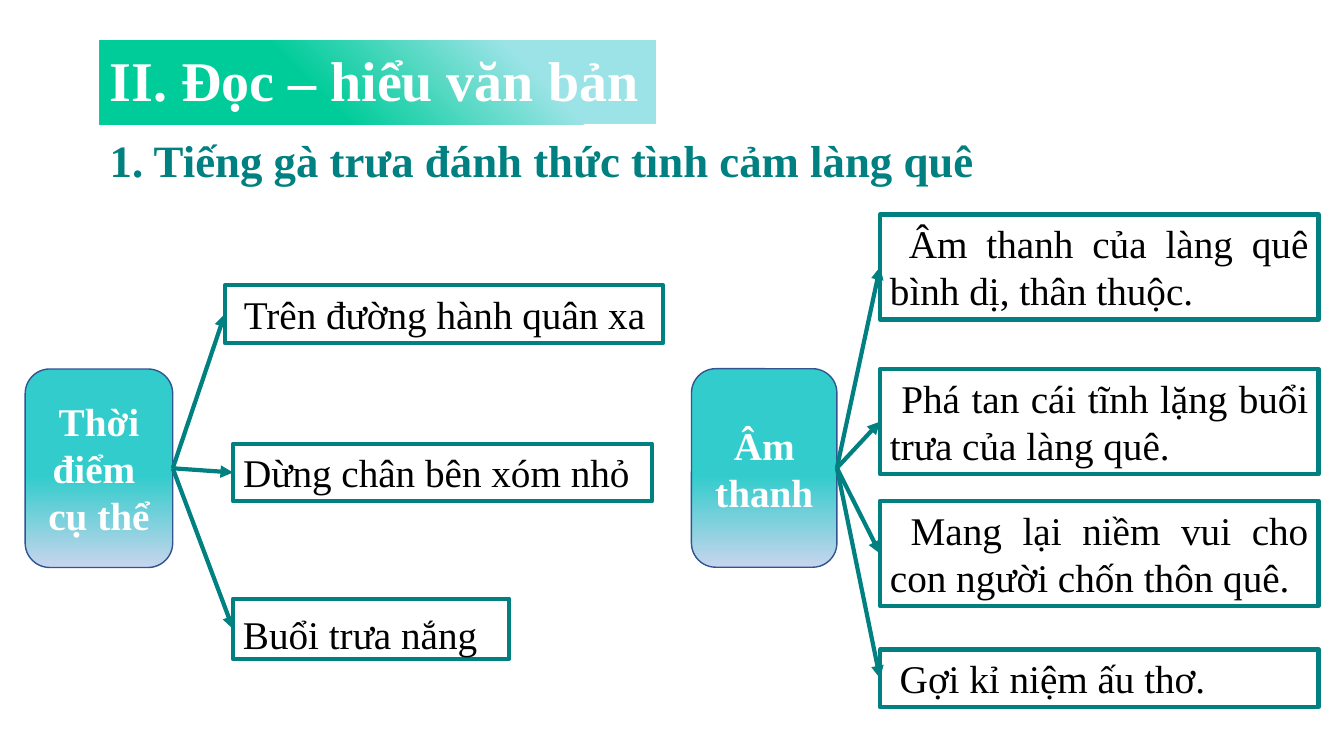
from lxml import etree
from pptx import Presentation
from pptx.dml.color import RGBColor
from pptx.enum.shapes import MSO_CONNECTOR, MSO_SHAPE
from pptx.enum.text import MSO_ANCHOR, MSO_AUTO_SIZE, PP_ALIGN
from pptx.oxml.ns import qn
from pptx.util import Pt

RECT = MSO_SHAPE.RECTANGLE
ROUND = MSO_SHAPE.ROUNDED_RECTANGLE
STRAIGHT = MSO_CONNECTOR.STRAIGHT
TOP, MIDDLE = MSO_ANCHOR.TOP, MSO_ANCHOR.MIDDLE
GROW, FIXED = MSO_AUTO_SIZE.SHAPE_TO_FIT_TEXT, MSO_AUTO_SIZE.NONE
LEFT, CENTER, JUSTIFY = PP_ALIGN.LEFT, PP_ALIGN.CENTER, PP_ALIGN.JUSTIFY

WHITE = RGBColor(0xFF, 0xFF, 0xFF)
BLACK = RGBColor(0, 0, 0)
TEAL = RGBColor(0, 0x80, 0x80)
GREEN = RGBColor(0, 0xCC, 0x99)
AQUA = RGBColor(0x9B, 0xE3, 0xE6)
CYAN = RGBColor(0x33, 0xCC, 0xCC)
PALE = RGBColor(0xC7, 0xD5, 0xED)
NAVY = RGBColor(0x32, 0x54, 0x91)

LEFT_SITE, RIGHT_SITE = 1, 3


class Board:
    font = "Times New Roman"
    size = 28

    def __init__(self, slide):
        self.shapes = slide.shapes

    def place(self, shape, x, y, w, h):
        shape.left, shape.top = Pt(x), Pt(y)
        shape.width, shape.height = Pt(w), Pt(h)

    def shade(self, shape, angle, *stops):
        """Fill with a linear gradient; angle runs counter-clockwise."""
        shape.fill.gradient()
        shape.fill.gradient_angle = angle
        for stop, (pos, color) in zip(shape.fill.gradient_stops, stops):
            stop.position = pos
            stop.color.rgb = color

    def letter(self, shape, lines, color, size=size, bold=False, align=LEFT,
               anchor=TOP, fit=GROW, space=1.0, after=0):
        """Set the lines as paragraphs of the shape."""
        frame = shape.text_frame
        frame.word_wrap = True
        frame.auto_size = fit
        frame.vertical_anchor = anchor
        for i, line in enumerate(lines):
            para = frame.add_paragraph() if i else frame.paragraphs[0]
            para.alignment = align
            para.line_spacing = space
            para.space_before, para.space_after = Pt(0), Pt(after)
            run = para.add_run()
            run.text = line
            font = run.font
            font.name, font.size, font.bold = self.font, Pt(size), bold
            font.color.rgb = color

    def title(self, text, *area):
        head = self.shapes.title
        self.place(head, *area)
        self.shade(head, 225, (0.24, AQUA), (0.61, GREEN))
        self.letter(head, [text], WHITE, 40, True)

    def label(self, text, *area):
        box = self.shapes.add_textbox(*map(Pt, area))
        self.letter(box, [text], TEAL, 32, True, space=1.15, after=10)

    def shape(self, kind, area, color, width):
        item = self.shapes.add_shape(kind, *map(Pt, area))
        item.shadow.inherit = False
        item.line.color.rgb = color
        item.line.width = Pt(width)
        return item

    def node(self, lines, *area):
        item = self.shape(ROUND, area, NAVY, 1)
        self.shade(item, 270, (0.54, CYAN), (1, PALE))
        self.letter(item, lines, WHITE, bold=True, align=CENTER,
                    anchor=MIDDLE, fit=FIXED)
        return item

    def box(self, text, *area, **style):
        item = self.shape(RECT, area, TEAL, 3)
        item.fill.background()
        self.letter(item, [text], BLACK, **style)
        return item

    def arrow(self, start, end):
        link = self.shapes.add_connector(STRAIGHT, 0, 0, 0, 0)
        link.begin_connect(start, RIGHT_SITE)
        link.end_connect(end, LEFT_SITE)
        link.line.color.rgb = TEAL
        link.line.width = Pt(3)
        props = link.element.spPr
        etree.SubElement(props.find(qn("a:ln")), qn("a:tailEnd"),
                         type="triangle")
        etree.SubElement(props, qn("a:effectLst"))


def main():
    deck = Presentation()
    deck.slide_width, deck.slide_height = Pt(960), Pt(540)
    board = Board(deck.slides.add_slide(deck.slide_layouts[5]))
    board.title("II. Đọc – hiểu văn bản", 71.3, 28.8, 397.4, 55.6)
    board.label("1. Tiếng gà trưa đánh thức tình cảm làng quê",
                71.3, 85.7, 833.8, 48.2)

    time = board.node(["Thời điểm ", "cụ thể"], 18, 263.6, 105.4, 141.8)
    sound = board.node(["Âm thanh"], 493.9, 263.4, 103.9, 141.8)

    moments = [
        (" Trên đường hành quân xa", 160.6, 203.8, 313.2, 41.2,
         {"align": JUSTIFY}),
        ("Dừng chân bên xóm nhỏ", 166.5, 316.9, 299.3, 41.2, {}),
        ("Buổi trưa nắng", 166.5, 427.7, 197.3, 43.2,
         {"space": 1.15, "after": 12}),
    ]
    for text, x, y, w, h, style in moments:
        board.arrow(time, board.box(text, x, y, w, h, **style))

    effects = [
        (" Âm thanh của làng quê bình dị, thân thuộc.", 153.2, 75.1),
        (" Phá tan cái tĩnh lặng buổi trưa của làng quê.", 263.6, 75.1),
        (" Mang lại niềm vui cho con người chốn thôn quê.", 357.8, 75.1),
        (" Gợi kỉ niệm ấu thơ.", 463.9, 41.2),
    ]
    for text, y, h in effects:
        board.arrow(sound, board.box(text, 628.6, y, 313.2, h, align=JUSTIFY))

    deck.save("out.pptx")


if __name__ == "__main__":
    main()
